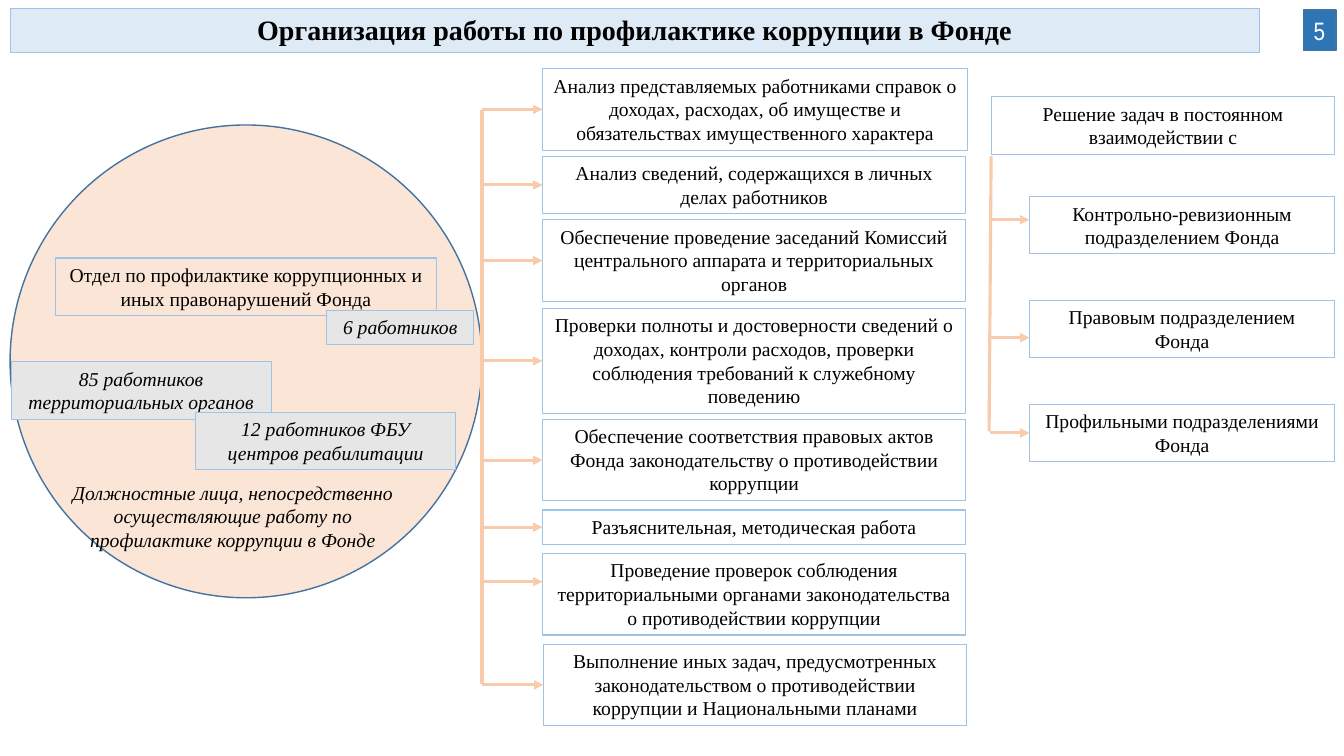
from dataclasses import dataclass

from lxml import etree
from pptx import Presentation, util as u
from pptx.dml.color import RGBColor
from pptx.enum import shapes, text
from pptx.oxml.ns import qn

WIDTH, HEIGHT = u.Inches(13.33), u.Inches(7.5)
GRID_COLS, GRID_ROWS = 133.3, 75
COLORS = {
    "ink": "000000", "white": "FFFFFF", "circle": "FBE5D6", "edge": "43739E",
    "title": "DEEBF7", "border": "9DC3E6", "staff": "E7E6E6",
    "number": "2E75B6", "arrow": "F8CBAD",
}
SERIF = "Times New Roman"


@dataclass(frozen=True)
class Box:
    """A block of text, placed in grid columns and rows."""
    words: str
    col: float
    row: float
    wide: float
    high: float
    fill: str = ""
    border: str = "border"
    border_width: float = 0.75
    size: int = 14
    font: str = SERIF
    ink: str = "ink"
    bold: bool = False
    italic: bool = False
    wrap: bool = True
    arrow_shift: float = 0  # rows from the middle of the left side


def staff(words: str, col: float, row: float, wide: float, high: float) -> Box:
    return Box(words, col, row, wide, high, fill="staff", italic=True)


def task(words: str, row: float, high: float, col: float = 53.8,
         wide: float = 42, arrow_shift: float = 0) -> Box:
    return Box(words, col, row, wide, high, arrow_shift=arrow_shift)


def partner(words: str, place: int, arrow_shift: float = 0) -> Box:
    return Box(words, 102.1, 19.5 + 10.3 * place, 30.3, 5.7, arrow_shift=arrow_shift)


TITLE = Box("Организация работы по профилактике коррупции в Фонде",
            1, 0.8, 123.9, 4.4, fill="title", size=20, bold=True)
PAGE_NUMBER = Box("5", 129.3, 1, 3.2, 4, fill="number", border="edge", border_width=1,
                  size=18, font="Arial Narrow", ink="white", wrap=False)
DEPARTMENT = [
    Box("Отдел по профилактике коррупционных и иных правонарушений Фонда",
        5.5, 25.6, 37.8, 5.7),
    staff("6 работников", 32.4, 30.8, 14.6, 3.4),
    staff("85 работников территориальных органов", 1.1, 35.9, 25.8, 5.7),
    staff("12 работников ФБУ центров реабилитации", 19.4, 40.9, 25.8, 5.7),
    Box("Должностные лица, непосредственно осуществляющие работу по "
        "профилактике коррупции в Фонде", 4.2, 47.2, 37.8, 8.1, border="", italic=True),
]
TASKS = [
    task("Анализ представляемых работниками справок о доходах, расходах, об имуществе "
         "и обязательствах имущественного характера", 6.8, 8.1, wide=42.2),
    task("Анализ сведений, содержащихся в личных делах работников", 15.5, 5.7),
    task("Обеспечение проведение заседаний Комиссий центрального аппарата "
         "и территориальных органов", 21.8, 8.1),
    task("Проверки полноты и достоверности сведений о доходах, контроли расходов, "
         "проверки соблюдения требований к служебному поведению", 30.6, 10.4),
    task("Обеспечение соответствия правовых актов Фонда законодательству "
         "о противодействии коррупции", 41.6, 8.1),
    task("Разъяснительная, методическая работа", 50.6, 3.4),
    task("Проведение проверок соблюдения территориальными органами законодательства "
         "о противодействии коррупции", 54.9, 8.1, arrow_shift=-1.25),
    task("Выполнение иных задач, предусмотренных законодательством о противодействии "
         "коррупции и Национальными планами", 63.9, 8.1, col=53.9),
]
INTERACTION = Box("Решение задач в постоянном взаимодействии с", 98.3, 9.6, 34.1, 5.7)
PARTNERS = [
    partner("Контрольно-ревизионным подразделением Фонда", 0, -0.55),
    partner("Правовым подразделением Фонда", 1, 0.85),
    partner("Профильными подразделениями Фонда", 2),
]


def cols(count: float) -> int:
    return round(WIDTH * count / GRID_COLS)


def rows(count: float) -> int:
    return round(HEIGHT * count / GRID_ROWS)


def rgb(name: str) -> RGBColor:
    return RGBColor.from_string(COLORS[name])


def apply(target, values: dict) -> None:
    for attribute, value in values.items():
        setattr(target, attribute, value)


def paint(shape, fill: str, border: str, border_width: float) -> None:
    """Set fill and outline; an empty colour name means none."""
    if fill:
        shape.fill.solid()
        shape.fill.fore_color.rgb = rgb(fill)
    else:
        shape.fill.background()
    if border:
        shape.line.color.rgb = rgb(border)
        shape.line.width = u.Pt(border_width)
    else:
        shape.line.fill.background()


def draw_box(slide, box: Box):
    place = cols(box.col), rows(box.row), cols(box.wide), rows(box.high)
    if box.border:
        shape = slide.shapes.add_shape(shapes.MSO_SHAPE.RECTANGLE, *place)
        shape.shadow.inherit = False
    else:
        shape = slide.shapes.add_textbox(*place)
    paint(shape, box.fill, box.border, box.border_width)
    frame = shape.text_frame
    apply(frame, {"word_wrap": box.wrap, "text": box.words,
                  "auto_size": text.MSO_AUTO_SIZE.SHAPE_TO_FIT_TEXT,
                  "vertical_anchor": text.MSO_ANCHOR.TOP})
    paragraph = frame.paragraphs[0]
    paragraph.alignment = text.PP_ALIGN.CENTER if box.wrap else text.PP_ALIGN.LEFT
    font = paragraph.runs[0].font
    apply(font, {"name": box.font, "size": u.Pt(box.size),
                 "bold": box.bold, "italic": box.italic})
    font.color.rgb = rgb(box.ink)
    return shape


def draw_line(slide, col1: float, row1: float, col2: float, row2: float,
              arrow: bool = False):
    line = slide.shapes.add_connector(shapes.MSO_CONNECTOR.STRAIGHT, cols(col1),
                                      rows(row1), cols(col2), rows(row2))
    line.line.color.rgb = rgb("arrow")
    line.line.width = u.Pt(2.25)
    if arrow:
        etree.SubElement(line.line._get_or_add_ln(), qn("a:tailEnd"), type="triangle")
    etree.SubElement(line._element.spPr, qn("a:effectLst"))
    return line


def draw_branches(slide, boxes: list[Box], trunk_col: float) -> None:
    """Draw the boxes, each with an arrow leading from the trunk to its left side."""
    for box in boxes:
        shape = draw_box(slide, box)
        row = box.row + box.high / 2 + box.arrow_shift
        arrow = draw_line(slide, trunk_col, row, box.col, row, arrow=True)
        if not box.arrow_shift:
            arrow.end_connect(shape, 1)


def main() -> None:
    deck = Presentation()
    deck.slide_width, deck.slide_height = WIDTH, HEIGHT
    slide = deck.slides.add_slide(deck.slide_layouts[6])

    circle = slide.shapes.add_shape(shapes.MSO_SHAPE.OVAL, cols(1), rows(12.4),
                                    cols(46.8), rows(46.9))
    circle.shadow.inherit = False
    paint(circle, "circle", "edge", 1)
    for box in [TITLE, PAGE_NUMBER, *DEPARTMENT, INTERACTION]:
        draw_box(slide, box)

    draw_line(slide, 47.8, 10.9, 47.8, 67.9)
    draw_branches(slide, TASKS, trunk_col=47.8)
    draw_line(slide, 98.3, 15.5, 98.1, 42.8)
    draw_branches(slide, PARTNERS, trunk_col=98.2)
    deck.save("out.pptx")


if __name__ == "__main__":
    main()
